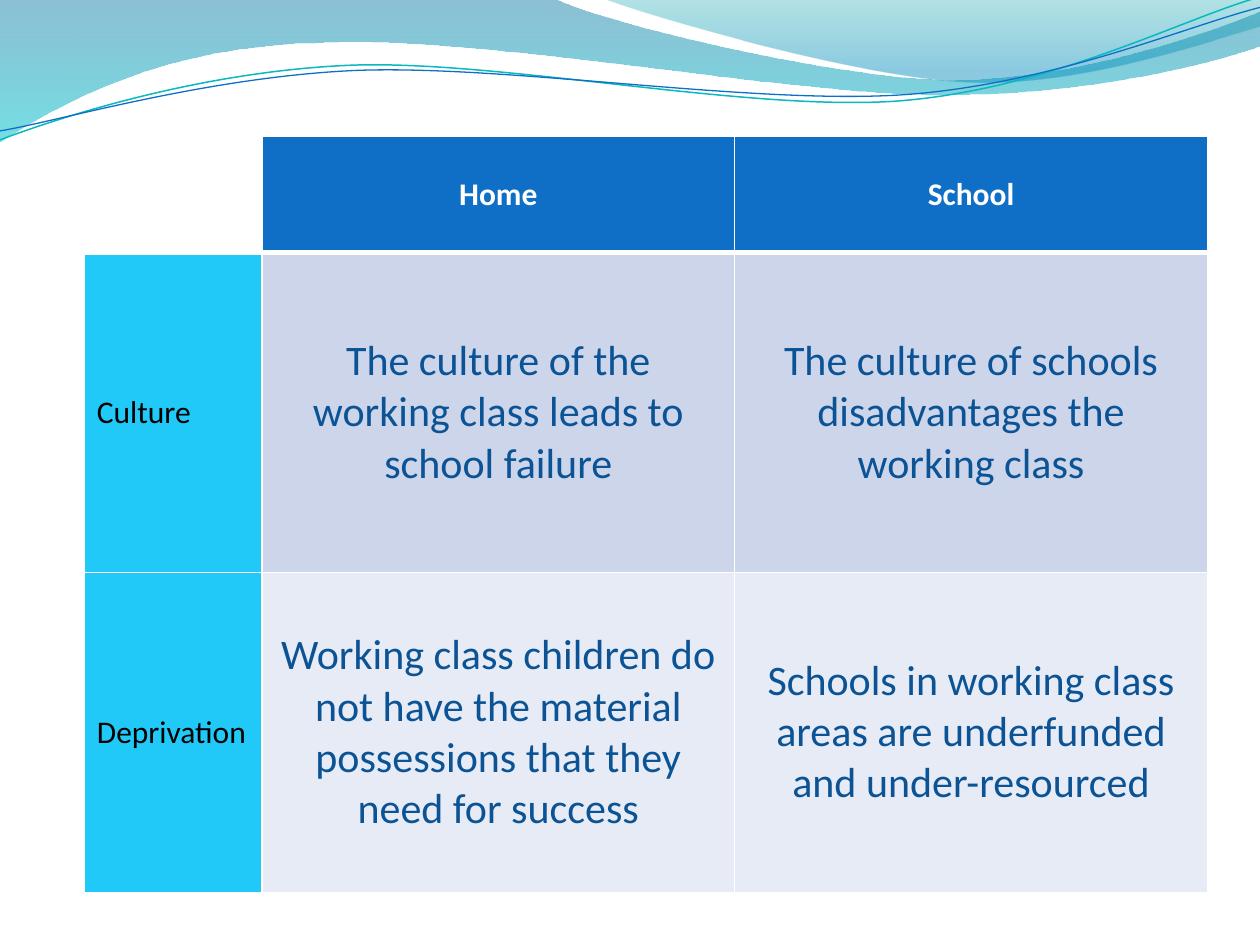
from lxml import etree
from pptx import Presentation
from pptx.dml.color import RGBColor
from pptx.enum.text import MSO_ANCHOR, PP_ALIGN
from pptx.oxml.ns import qn
from pptx.util import Cm, Pt

MIDDLE = MSO_ANCHOR.MIDDLE
CENTER = PP_ALIGN.CENTER
LEFT = PP_ALIGN.LEFT

WHITE = RGBColor(0xFF, 0xFF, 0xFF)
BLACK = RGBColor(0x00, 0x00, 0x00)
BLUE = RGBColor(0x0F, 0x6F, 0xC6)
TEAL = RGBColor(0x0A, 0xB8, 0xBF)
SKY = RGBColor(0x20, 0xC9, 0xF8)
NAVY = RGBColor(0x0B, 0x53, 0x94)
BAND_DARK = RGBColor(0xCC, 0xD5, 0xEA)
BAND_LIGHT = RGBColor(0xE7, 0xEB, 0xF5)
WAVE_TOP = RGBColor(0x00, 0x74, 0xA1)
WAVE_BOTTOM = RGBColor(0x00, 0xC6, 0xCF)
CREST_TOP = RGBColor(0x00, 0xA1, 0xA9)
CREST_BOTTOM = RGBColor(0x00, 0x8B, 0xBF)

FONT = "Calibri"
CURVE_ROTATION = 357.3

WAVE = [(0, -0.03), (11.18, -0.03),
        (12.09, 0.43, 16.87, 1.6, 19.25, 1.6),
        (21.67, 1.6, 24.33, 0.66, 25.4, 0.23),
        (25.43, 0.91),
        (24.97, 1.12, 22.1, 1.93, 18.95, 1.91),
        (15.8, 1.91, 9.7, 0.71, 6.53, 0.86),
        (3.28, 0.89, 1.17, 2.11, -0.03, 2.87)]
CREST = [(12.17, -0.03),
         (12.93, 0.28, 17.32, 1.57, 19.53, 1.65),
         (21.74, 1.75, 24.41, 0.81, 25.4, 0.53),
         (25.4, 0)]
TEAL_LINE = [(-0.05, 2.22),
             (1.19, 1.82, 4.02, 1.04, 7.05, 1.05),
             (10.05, 1.07, 15.02, 2.37, 18.08, 2.29),
             (21.13, 2.2, 23.87, 0.91, 25.41, 0.55)]
BLUE_LINE = [(-0.04, 2.04),
             (1.16, 1.9, 4.18, 1.15, 7.2, 1.16),
             (10.25, 1.19, 15.13, 2.23, 18.18, 2.17),
             (21.21, 2.1, 23.93, 1.06, 25.45, 0.75)]

COLUMNS = [3.58, 9.53, 9.53]
ROWS = [2.35, 6.45, 6.45]
HEADERS = ["Home", "School"]
BODY = [
    ("Culture", BAND_DARK,
     ["The culture of the working class leads to school failure",
      "The culture of schools disadvantages the working class"]),
    ("Deprivation", BAND_LIGHT,
     ["Working class children do not have the material possessions "
      "that they need for success",
      "Schools in working class areas are underfunded and under-resourced"]),
]


def add_outline(s, segments, close):
    points = [(Cm(seg[i]), Cm(seg[i + 1]))
              for seg in segments for i in range(0, len(seg), 2)]
    builder = s.shapes.build_freeform(*points[0], scale=1.0)
    builder.add_line_segments(points[1:], close=close)
    sp = builder.convert_to_shape()
    sp.shadow.inherit = False
    bend_curves(sp, segments[1:])
    return sp


def bend_curves(sp, segments):
    lines = iter(list(sp._element.iter(qn("a:lnTo"))))
    for seg in segments:
        steps = [next(lines) for _ in range(len(seg) // 2)]
        if len(steps) == 1:
            continue
        curve = etree.Element(qn("a:cubicBezTo"))
        steps[0].addprevious(curve)
        for step in steps:
            curve.append(step[0])
            step.getparent().remove(step)


def add_wave(s, segments, stops):
    sp = add_outline(s, segments, True)
    sp.line.fill.background()
    sp.fill.gradient()
    sp.fill.gradient_angle = 270
    for stop, (position, color, _) in zip(sp.fill.gradient_stops, stops):
        stop.position = position
        stop.color.rgb = color
    for clr, (_, _, alpha) in zip(sp._element.spPr.iter(qn("a:srgbClr")), stops):
        etree.SubElement(clr, qn("a:alpha"), val=str(alpha * 1000))


def add_curve(s, segments, color, width):
    sp = add_outline(s, segments, False)
    sp.rotation = CURVE_ROTATION
    sp.fill.background()
    sp.line.color.rgb = color
    sp.line.width = Pt(width)


def set_borders(cell, bottom):
    tcPr = cell._tc.get_or_add_tcPr()
    for tag, width in (("lnL", 1), ("lnR", 1), ("lnT", 1), ("lnB", bottom)):
        ln = etree.SubElement(tcPr, qn(f"a:{tag}"), w=str(Pt(width)))
        fill = etree.SubElement(ln, qn("a:solidFill"))
        etree.SubElement(fill, qn("a:srgbClr"), val=str(WHITE))


def fill_cell(cell, text, fill, color, size, align=CENTER, bold=False):
    cell.fill.solid()
    cell.fill.fore_color.rgb = fill
    cell.vertical_anchor = MIDDLE
    p = cell.text_frame.paragraphs[0]
    p.alignment = align
    r = p.add_run()
    r.text = text
    r.font.name = FONT
    r.font.size = Pt(size)
    r.font.bold = bold
    r.font.color.rgb = color


def add_matrix(s):
    table = s.shapes.add_table(len(ROWS), len(COLUMNS), Cm(1.7), Cm(2.74),
                               Cm(sum(COLUMNS)), Cm(sum(ROWS))).table
    for column, width in zip(table.columns, COLUMNS):
        column.width = Cm(width)
    for i, (row, height) in enumerate(zip(table.rows, ROWS)):
        row.height = Cm(height)
        for cell in row.cells:
            set_borders(cell, 3 if i == 0 else 1)
    table.cell(0, 0).fill.background()
    for j, text in enumerate(HEADERS, 1):
        fill_cell(table.cell(0, j), text, BLUE, WHITE, 18, bold=True)
    for i, (label, band, texts) in enumerate(BODY, 1):
        fill_cell(table.cell(i, 0), label, SKY, BLACK, 18, LEFT)
        for j, text in enumerate(texts, 1):
            fill_cell(table.cell(i, j), text, band, NAVY, 24)


def main():
    prs = Presentation()
    prs.slide_width, prs.slide_height = Cm(25.4), Cm(19.05)
    s = prs.slides.add_slide(prs.slide_layouts[6])
    add_wave(s, WAVE, [(0, WAVE_TOP, 45), (1, WAVE_BOTTOM, 55)])
    add_wave(s, CREST, [(0, CREST_TOP, 30), (0.8, CREST_BOTTOM, 45)])
    add_curve(s, TEAL_LINE, TEAL, 0.85)
    add_curve(s, BLUE_LINE, BLUE, 0.75)
    add_matrix(s)
    prs.save("out.pptx")


if __name__ == "__main__":
    main()
